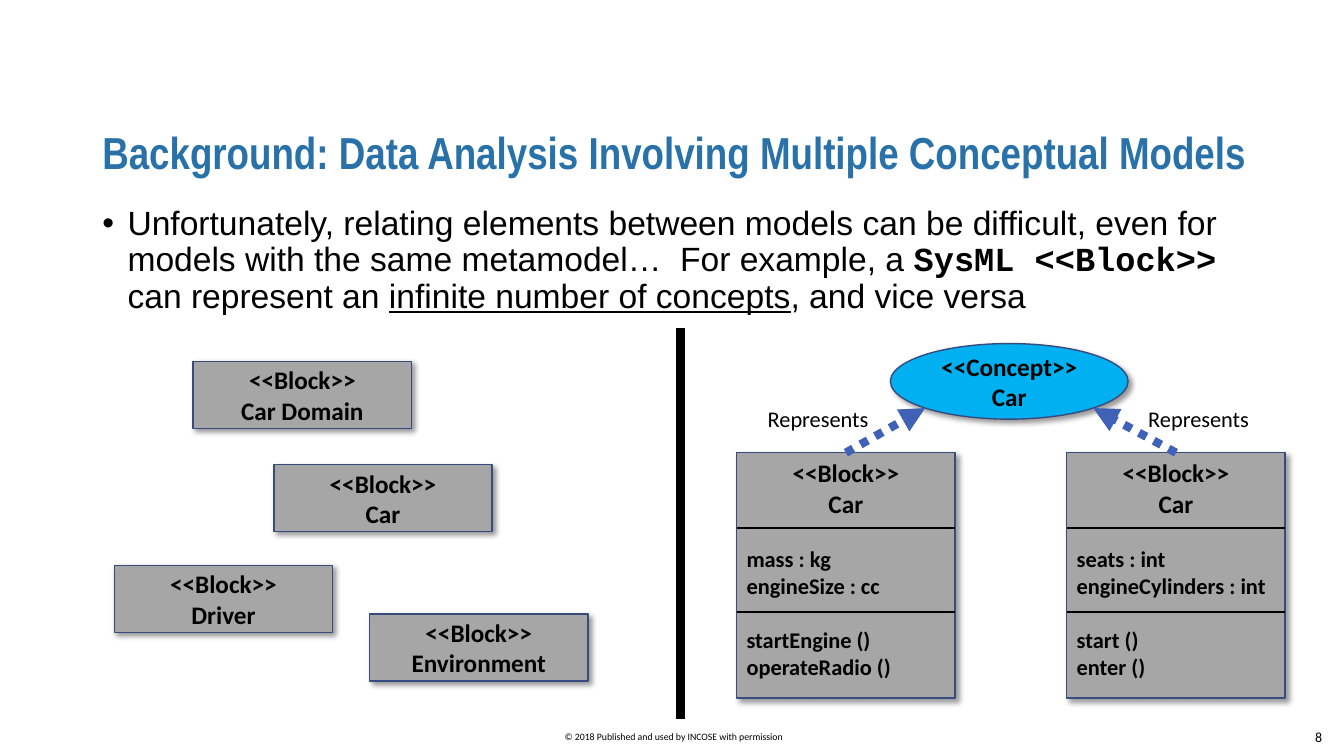
from dataclasses import dataclass
from math import sqrt

from lxml.etree import SubElement
from pptx import Presentation
from pptx.dml.color import RGBColor as RGB
from pptx.enum.dml import MSO_LINE as DASH
from pptx.enum.shapes import MSO_CONNECTOR as CONN, MSO_SHAPE as SHAPE
from pptx.enum.text import MSO_ANCHOR as ANCHOR, PP_ALIGN as ALIGN
from pptx.oxml.ns import qn
from pptx.util import Inches, Pt


@dataclass(frozen=True)
class Theme:
    title: str = "2971A9"
    ink: str = "000000"
    block: str = "A6A6A6"
    concept: str = "00B0F0"
    outline: str = "374B7F"
    arrow: str = "4062B6"
    title_font: str = "Arial Narrow"
    body_font: str = "Arial"
    code_font: str = "Courier New"
    label_font: str = "Calibri"
    title_size: int = 32
    body_size: int = 24
    name_size: int = 18
    label_size: int = 16
    number_size: int = 10
    footer_size: int = 7


class Deck:
    COLS, ROWS = 160, 90

    def __init__(self, theme):
        self.theme = theme
        self.prs = Presentation()
        self.prs.slide_width = self.grid(self.COLS)
        self.prs.slide_height = self.grid(self.ROWS)
        self.s = self.prs.slides.add_slide(self.prs.slide_layouts[6])

    def grid(self, units):
        return Inches(units / 12)

    def box(self, *units):
        return [self.grid(u) for u in units]

    def style(self, r, size, font, color=None, bold=False):
        r.font.size, r.font.name, r.font.bold = Pt(size), font, bold
        r.font.color.rgb = RGB.from_string(color or self.theme.ink)

    def text(self, at, text, size, font, color=None, bold=False,
             align=ALIGN.CENTER, anchor=ANCHOR.TOP):
        tf = self.s.shapes.add_textbox(*self.box(*at)).text_frame
        tf.word_wrap, tf.vertical_anchor = True, anchor
        tf.text = text
        p = tf.paragraphs[0]
        p.alignment = align
        self.style(p.runs[0], size, font, color, bold)
        return p

    def bullet(self, at, parts):
        t = self.theme
        tf = self.s.shapes.add_textbox(*self.box(*at)).text_frame
        tf.word_wrap = True
        p = tf.paragraphs[0]
        pPr = p._p.get_or_add_pPr()
        pPr.set("marL", str(Inches(0.25)))
        pPr.set("indent", str(Inches(-0.25)))
        SubElement(pPr, qn("a:buFont"), typeface=t.body_font)
        SubElement(pPr, qn("a:buChar"), char="•")
        p.line_spacing = 0.9
        for text, font, bold, underline in parts:
            r = p.add_run()
            r.text = text
            self.style(r, t.body_size, font, bold=bold)
            r.font.underline = underline

    def shape(self, kind, at, fill, names, features=()):
        t = self.theme
        sp = self.s.shapes.add_shape(kind, *self.box(*at))
        sp.fill.solid()
        sp.fill.fore_color.rgb = RGB.from_string(fill)
        sp.line.color.rgb = RGB.from_string(t.outline)
        sp.line.width = Pt(1)
        self.drop_shadow(sp)
        tf = sp.text_frame
        tf.word_wrap = True
        tf.vertical_anchor = ANCHOR.TOP if features else ANCHOR.MIDDLE
        tf.text = "\n".join([*names, *features])
        for i, p in enumerate(tf.paragraphs):
            feature = i - len(names)
            p.alignment = ALIGN.CENTER if feature < 0 else ALIGN.LEFT
            if feature >= 0 and feature % 2 == 0:
                p.space_before = Pt(19.5)
            size = t.name_size if feature < 0 else t.label_size
            self.style(p.runs[0], size, t.label_font, bold=True)
        return sp

    def drop_shadow(self, sp):
        sp.shadow.inherit = False
        effects = sp._element.spPr.find(qn("a:effectLst"))
        shadow = SubElement(effects, qn("a:outerShdw"), blurRad=str(Pt(4)), dist=str(Pt(3)),
                            dir="2700000", algn="tl", rotWithShape="0")
        color = SubElement(shadow, qn("a:srgbClr"), val=self.theme.ink)
        SubElement(color, qn("a:alpha"), val="40000")

    def line(self, x1, y1, x2, y2, width, color=None):
        c = self.s.shapes.add_connector(CONN.STRAIGHT, *self.box(x1, y1, x2, y2))
        c.line.width = Pt(width)
        c.line.color.rgb = RGB.from_string(color or self.theme.ink)
        SubElement(c._element.spPr, qn("a:effectLst"))
        return c

    def arrow(self, block, x1, y1, x2, y2):
        c = self.line(x1, y1, x2, y2, 6, self.theme.arrow)
        c.line.dash_style = DASH.ROUND_DOT
        SubElement(c.line._get_or_add_ln(), qn("a:tailEnd"), type="triangle")
        c.begin_connect(block, 0)


def main():
    t = Theme()
    d = Deck(t)
    d.text((57.7, 86.4, 45, 2.64), "© 2018 Published and used by INCOSE with permission",
           t.footer_size, t.label_font)
    title = d.text((11, 14, 140, 9),
                   "Background: Data Analysis Involving Multiple Conceptual Models",
                   t.title_size, t.title_font, t.title, True, ALIGN.LEFT, ANCHOR.MIDDLE)
    title.line_spacing = 0.9
    d.bullet((11, 24, 140, 15), [
        ("Unfortunately, relating elements between models can be difficult, even for models "
         "with the same metamodel…  For example, a ", t.body_font, False, False),
        ("SysML <<Block>>", t.code_font, True, False),
        (" can represent an ", t.body_font, False, False),
        ("infinite number of concepts", t.body_font, False, True),
        (", and vice versa", t.body_font, False, False),
    ])
    d.text((154, 85.3, 6, 4.8), "8", t.number_size, t.label_font, anchor=ANCHOR.MIDDLE)

    block_w = 26
    for x, y, name in [(23, 43, "Car Domain"), (32.6, 55.3, "Car"),
                       (13.6, 67.3, "Driver"), (44, 73.1, "Environment")]:
        d.shape(SHAPE.RECTANGLE, (x, y, block_w, 8), t.block, ["<<Block>>", name])

    d.line(81, 39, 81, 85.6, 6)

    oval_x, oval_y, oval_w, oval_h = 106, 40.9, 28.3, 9
    d.shape(SHAPE.OVAL, (oval_x, oval_y, oval_w, oval_h), t.concept, ["<<Concept>>", "Car"])
    center = oval_x + oval_w / 2
    reach = oval_w / 2 / sqrt(2)
    tip_y = oval_y + oval_h / 2 * (1 + 1 / sqrt(2))

    top = 53.9
    for x, side, label_x, features in [
        (87.7, -1, 88.4, ["mass : kg", "engineSize : cc", "startEngine ()", "operateRadio ()"]),
        (127, 1, 133.7, ["seats : int", "engineCylinders : int", "start ()", "enter ()"]),
    ]:
        block = d.shape(SHAPE.RECTANGLE, (x, top, block_w, 29.2), t.block,
                        ["<<Block>>", "Car"], features)
        for offset in (9, 19):
            d.line(x, top + offset, x + block_w, top + offset, 1.5)
        d.arrow(block, x + block_w / 2, top, center + side * reach, tip_y)
        d.text((label_x, 47.6, 18, 4.4), "Represents", t.label_size, t.label_font)

    d.prs.save("out.pptx")


if __name__ == "__main__":
    main()
